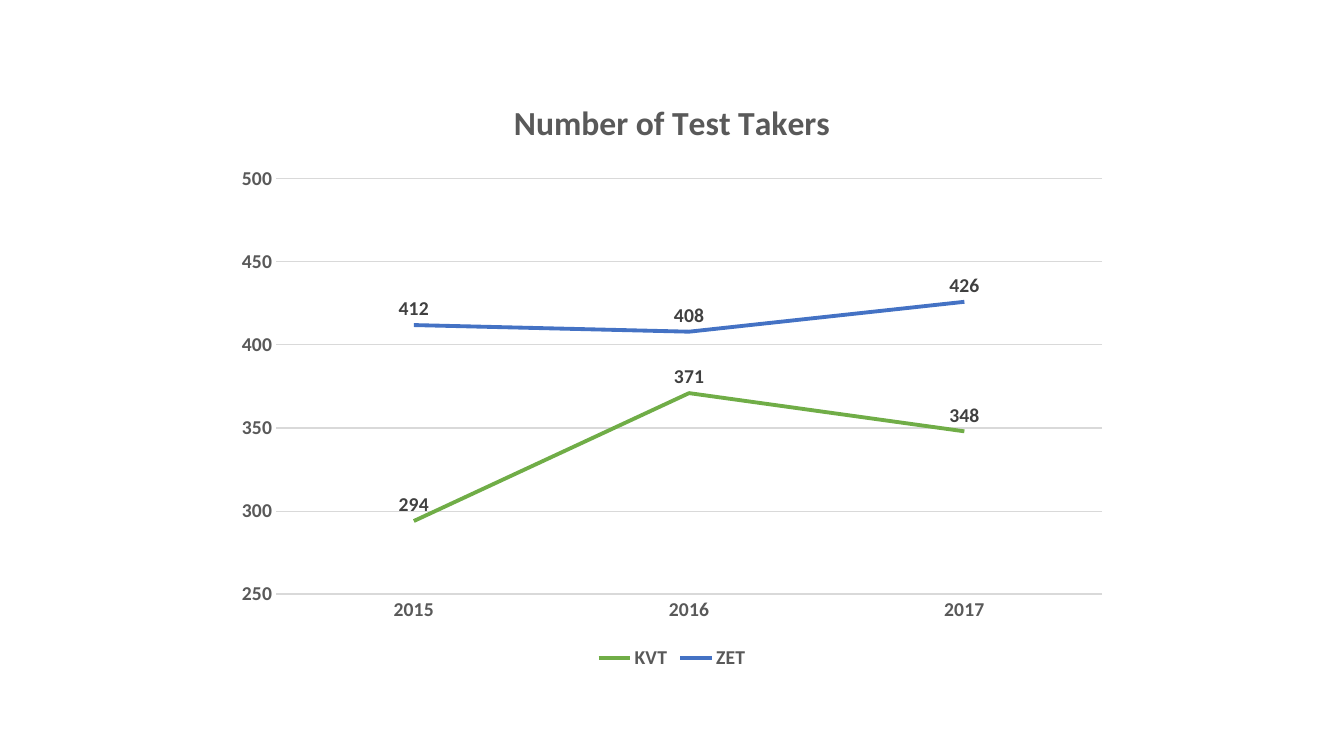
"""Build a slide with a line chart of the takers of two tests."""
from dataclasses import dataclass

from pptx import Presentation
from pptx.chart.axis import CategoryAxis, ValueAxis
from pptx.chart.chart import Chart
from pptx.chart.data import CategoryChartData
from pptx.chart.series import LineSeries
from pptx.dml.color import RGBColor
from pptx.dml.line import LineFormat
from pptx.enum import chart as kinds
from pptx.text.text import Font
from pptx.util import Pt

FONT = "Calibri"
GREY = "595959"
RULE = "D9D9D9"


@dataclass(frozen=True)
class Exam:
    name: str
    takers: tuple[int, ...]
    colour: str


YEARS = ("2015", "2016", "2017")
EXAMS = (
    Exam("KVT", (294, 371, 348), "70AD47"),
    Exam("ZET", (412, 408, 426), "4472C4"),
)


def colour(value: str) -> RGBColor:
    return RGBColor.from_string(value)


def style_font(font: Font, size: float = 14, shade: str = GREY) -> None:
    font.name = FONT
    font.size = Pt(size)
    font.bold = True
    font.color.rgb = colour(shade)


def style_line(line: LineFormat, shade: str, width: float) -> None:
    line.color.rgb = colour(shade)
    line.width = Pt(width)


def style_axis(axis: CategoryAxis | ValueAxis) -> None:
    axis.major_tick_mark = kinds.XL_TICK_MARK.NONE
    axis.minor_tick_mark = kinds.XL_TICK_MARK.NONE
    style_font(axis.tick_labels.font)


def style_axes(chart: Chart) -> None:
    years = chart.category_axis
    style_axis(years)
    style_line(years.format.line, RULE, 1)

    takers = chart.value_axis
    style_axis(takers)
    takers.format.line.fill.background()
    takers.minimum_scale = 250
    takers.maximum_scale = 500
    takers.major_unit = 50
    takers.has_major_gridlines = True
    style_line(takers.major_gridlines.format.line, RULE, 0.75)


def style_series(series: LineSeries, exam: Exam) -> None:
    series.smooth = False
    series.marker.style = kinds.XL_MARKER_STYLE.NONE
    style_line(series.format.line, exam.colour, 2.75)
    labels = series.data_labels
    labels.show_value = True
    labels.position = kinds.XL_LABEL_POSITION.ABOVE
    style_font(labels.font, shade="404040")


def add_title(chart: Chart, wording: str) -> None:
    chart.has_title = True
    chart.chart_title.include_in_layout = False
    para = chart.chart_title.text_frame.paragraphs[0]
    span = para.add_run()
    span.text = wording
    style_font(span.font, 24)


def add_legend(chart: Chart) -> None:
    chart.has_legend = True
    chart.legend.position = kinds.XL_LEGEND_POSITION.BOTTOM
    chart.legend.include_in_layout = False
    style_font(chart.legend.font)


def main() -> None:
    deck = Presentation()
    deck.slide_width, deck.slide_height = Pt(960), Pt(540)
    page = deck.slides.add_slide(deck.slide_layouts[6])

    figures = CategoryChartData()
    figures.categories = YEARS
    for exam in EXAMS:
        figures.add_series(exam.name, exam.takers)
    chart = page.shapes.add_chart(
        kinds.XL_CHART_TYPE.LINE, Pt(160), Pt(54.6), Pt(640), Pt(426.67), figures
    ).chart

    style_font(chart.font, shade="000000")
    add_title(chart, "Number of Test Takers")
    add_legend(chart)
    style_axes(chart)
    chart.plots[0].vary_by_categories = False
    for series, exam in zip(chart.plots[0].series, EXAMS):
        style_series(series, exam)

    deck.save("out.pptx")


if __name__ == "__main__":
    main()
